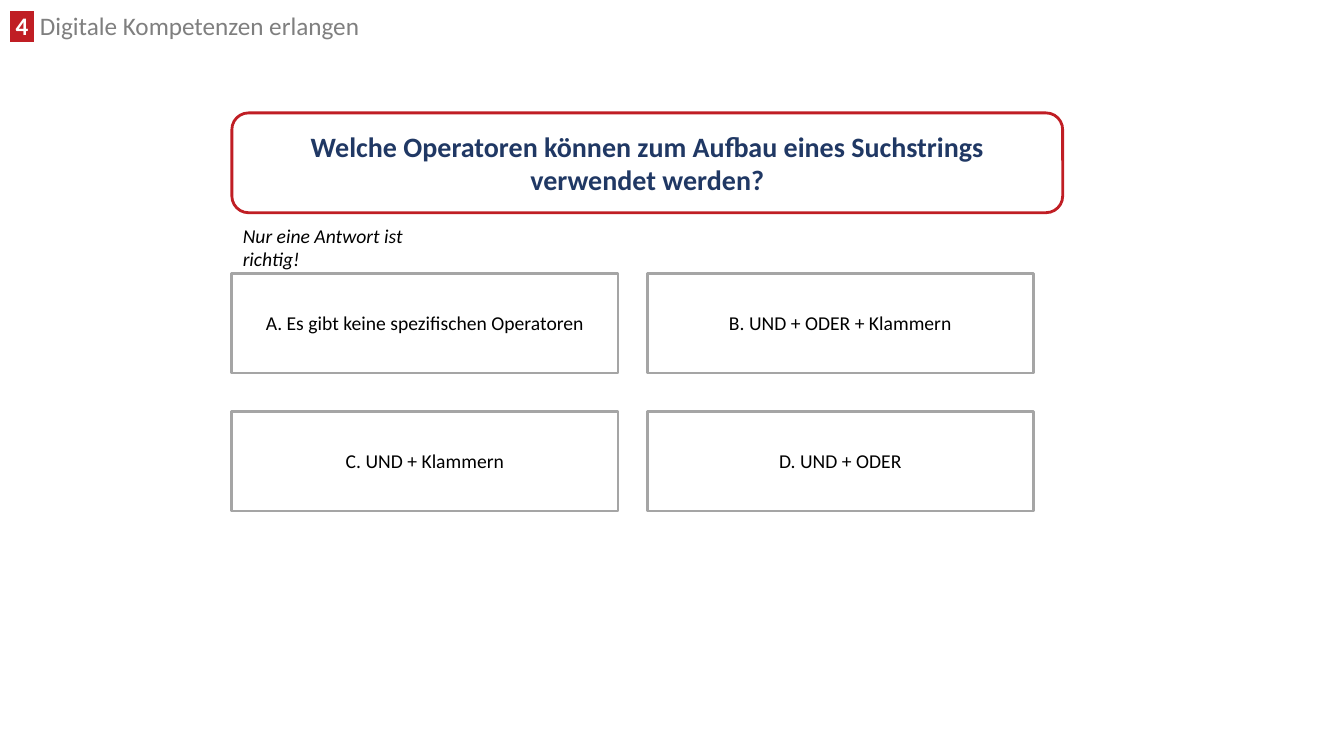
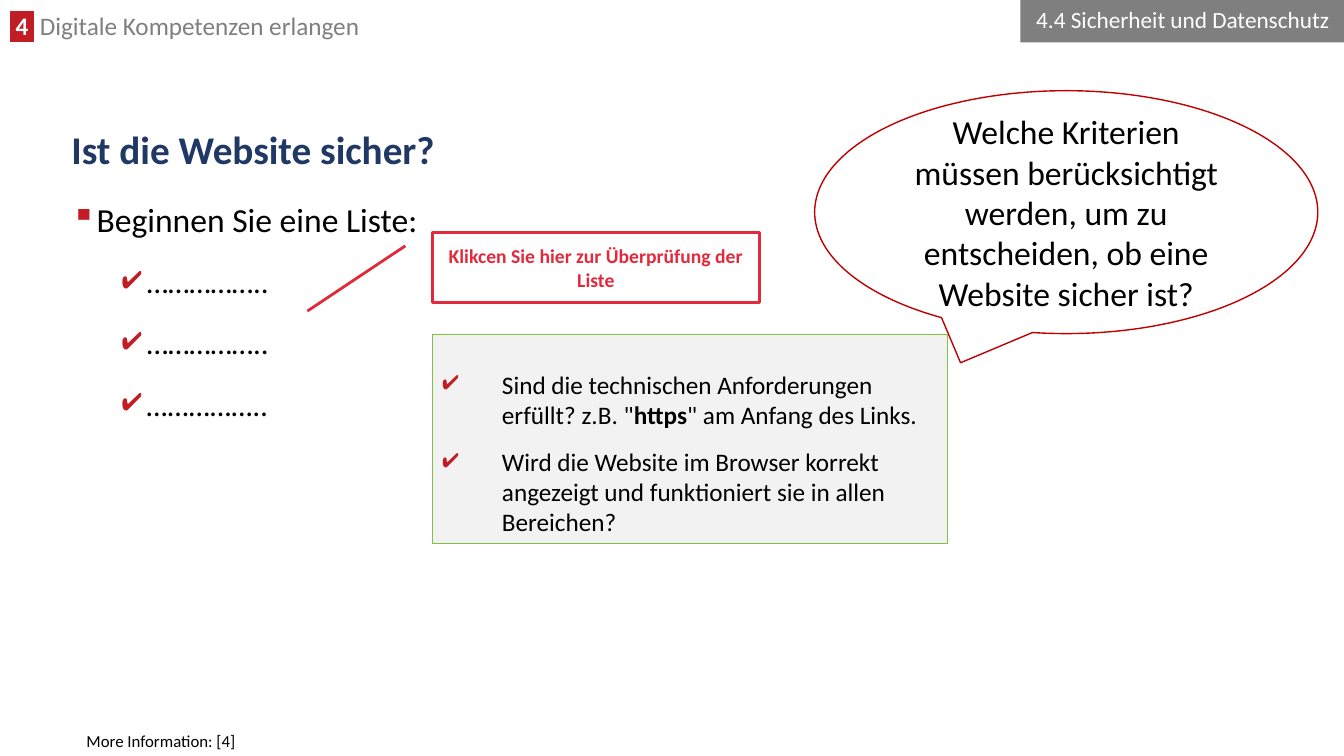
from lxml.etree import SubElement
from pptx import Presentation
from pptx.dml.color import RGBColor
from pptx.enum.shapes import MSO_SHAPE as Kind
from pptx.enum.text import MSO_ANCHOR as Anchor, PP_ALIGN as Align
from pptx.oxml.ns import qn
from pptx.util import Inches, Pt

# Shared palette and text styles
RED, NAVY, GREY, SILVER = "C01E24", "203864", "7F7F7F", "A5A5A5"
WHITE, BLACK, PALE, GREEN = "FFFFFF", "000000", "F2F2F2", "80C141"
WINE, ROSE = "C00000", "E12A3C"

HEAD = dict(size=Pt(18), color=GREY)
TITLE = dict(size=Pt(28), color=NAVY, bold=True)
QUIZ = dict(size=Pt(20), color=NAVY, bold=True)
SMALL = dict(size=Pt(14))
BODY = dict(size=Pt(18))
LARGE = dict(size=Pt(24))
MID = dict(alignment=Align.CENTER)
CENTER = dict(vertical_anchor=Anchor.MIDDLE)


def rgb(code):
    return RGBColor.from_string(code)


def put(slide, kind, at, paras, fill=None, line=None, **frame):
    """Add a box; each paragraph is (runs, format, bullet)."""
    spot = [Inches(v) for v in at]
    if kind is None:
        box = slide.shapes.add_textbox(*spot)
    else:
        box = slide.shapes.add_shape(kind, *spot)
        box.shadow.inherit = False
        box.fill.solid()
        box.fill.fore_color.rgb = rgb(fill)
        if line:
            box.line.color.rgb = rgb(line[0])
            box.line.width = Pt(line[1])
        else:
            box.line.fill.background()
    text = box.text_frame
    text.word_wrap = True
    for key, val in ({"vertical_anchor": Anchor.TOP} | frame).items():
        setattr(text, key, val)
    for num, (runs, form, mark) in enumerate(paras):
        para = text.add_paragraph() if num else text.paragraphs[0]
        if mark:
            sign, left, hang = mark
            prop = para._p.get_or_add_pPr()
            prop.set("marL", str(Inches(left)))
            prop.set("indent", str(-Inches(hang)))
            tint = SubElement(prop, qn("a:buClr"))
            SubElement(tint, qn("a:srgbClr"), val=RED)
            SubElement(prop, qn("a:buChar"), char=sign)
        for key, val in ({"alignment": Align.LEFT} | form).items():
            setattr(para, key, val)
        for words, style in runs:
            run = para.add_run()
            run.text = words
            look = {"name": "Calibri", "color": BLACK} | style
            run.font.color.rgb = rgb(look.pop("color"))
            back = look.pop("back", None)
            for key, val in look.items():
                setattr(run.font, key, val)
            if back:
                prop = run._r.get_or_add_rPr()
                glow = SubElement(prop, qn("a:highlight"))
                SubElement(glow, qn("a:srgbClr"), val=back)
                prop.find(qn("a:solidFill")).addnext(glow)
    return box


deck = Presentation()
deck.slide_width, deck.slide_height = Inches(13.33), Inches(7.5)

# Both slides carry the chapter header
quiz, site = [deck.slides.add_slide(deck.slide_layouts[6]) for _ in range(2)]
badge = HEAD | dict(color=WHITE, bold=True, back=RED)
for slide in (quiz, site):
    put(slide, None, (0, 0.11, 9.52, 0.35),
        [([(" 4 ", badge), (" Digitale Kompetenzen erlangen", HEAD)],
          dict(line_spacing=0.8), None)])

# Slide 1: question and hint
ask = "Welche Operatoren können zum Aufbau eines Suchstrings verwendet werden?"
put(quiz, Kind.ROUNDED_RECTANGLE, (2.3, 1.12, 8.24, 0.99),
    [([(ask, QUIZ)], MID, None)], WHITE, (RED, 2), **CENTER)
put(quiz, None, (2.31, 2.17, 2.2, 0.34),
    [([("Nur eine Antwort ist richtig!", SMALL | dict(italic=True))], {}, None)])

# Slide 1: answers in a two by two grid
picks = ["A. Es gibt keine spezifischen Operatoren", "B. UND + ODER + Klammern",
         "C. UND + Klammern", "D. UND + ODER"]
for num, pick in enumerate(picks):
    row, col = divmod(num, 2)
    put(quiz, Kind.RECTANGLE, (2.3 + 4.12 * col, 2.71 + 1.37 * row, 3.83, 0.99),
        [([(pick, SMALL)], MID, None)], WHITE, (SILVER, 2), **CENTER)

# Slide 2: title, section tab and footer
put(site, None, (0.61, 1.18, 12.1, 0.66),
    [([("Ist die Website sicher?", TITLE)], dict(line_spacing=0.9), None)],
    **CENTER)
put(site, Kind.RECTANGLE, (10.12, 0, 3.21, 0.42),
    [([("4.4 Sicherheit und Datenschutz", dict(size=Pt(16.6), color=WHITE))],
      dict(alignment=Align.RIGHT, line_spacing=0.9), None)],
    GREY, margin_right=Inches(0.15), **CENTER)
put(site, None, (0.76, 7.2, 12, 0.3),
    [([("More Information: [4]", dict(size=Pt(12)))], {}, None)])

# Slide 2: list to fill in
items = [([("Beginnen Sie eine Liste:", LARGE)], dict(line_spacing=1.2),
          ("▪", 0.25, 0.25))]
for slant in (False, False, True):
    items.append(([("……………..", dict(size=Pt(22), italic=slant))],
                  dict(level=1, line_spacing=1.2, space_before=Pt(12)),
                  ("✔", 0.75, 0.25)))
put(site, None, (0.61, 1.84, 7.74, 5.51), items)

# Slide 2: speech bubble
ask = ("Welche Kriterien müssen berücksichtigt werden, um zu entscheiden, "
       "ob eine Website sicher ist?")
talk = put(site, Kind.OVAL_CALLOUT, (8.08, 0.9, 4.99, 2.41),
           [([(ask, LARGE)], MID, None)], WHITE, (WINE, 1), **CENTER)
talk.adjustments[0], talk.adjustments[1] = -0.21, 0.62

# Slide 2: criteria and the callout that leads to them
tick = ("✔", 0.59, 0.59)
first = [('Sind die technischen Anforderungen erfüllt? z.B. "', BODY),
         ("https", BODY | dict(bold=True)), ('" am Anfang des Links.', BODY)]
then = [("Wird die Website im Browser korrekt angezeigt und funktioniert sie "
         "in allen Bereichen?", BODY)]
put(site, Kind.RECTANGLE, (4.29, 3.32, 5.11, 2.07),
    [(first, dict(level=1), tick),
     (then, dict(level=1, space_before=Pt(12)), tick)],
    PALE, (GREEN, 0.75), margin_top=Inches(0.34))
put(site, Kind.LINE_CALLOUT_1, (4.29, 2.31, 3.24, 0.69),
    [([("Klikcen Sie hier zur Überprüfung der Liste",
        SMALL | dict(color=ROSE, bold=True))], MID, None)],
    WHITE, (ROSE, 2), **CENTER)

deck.save("out.pptx")
